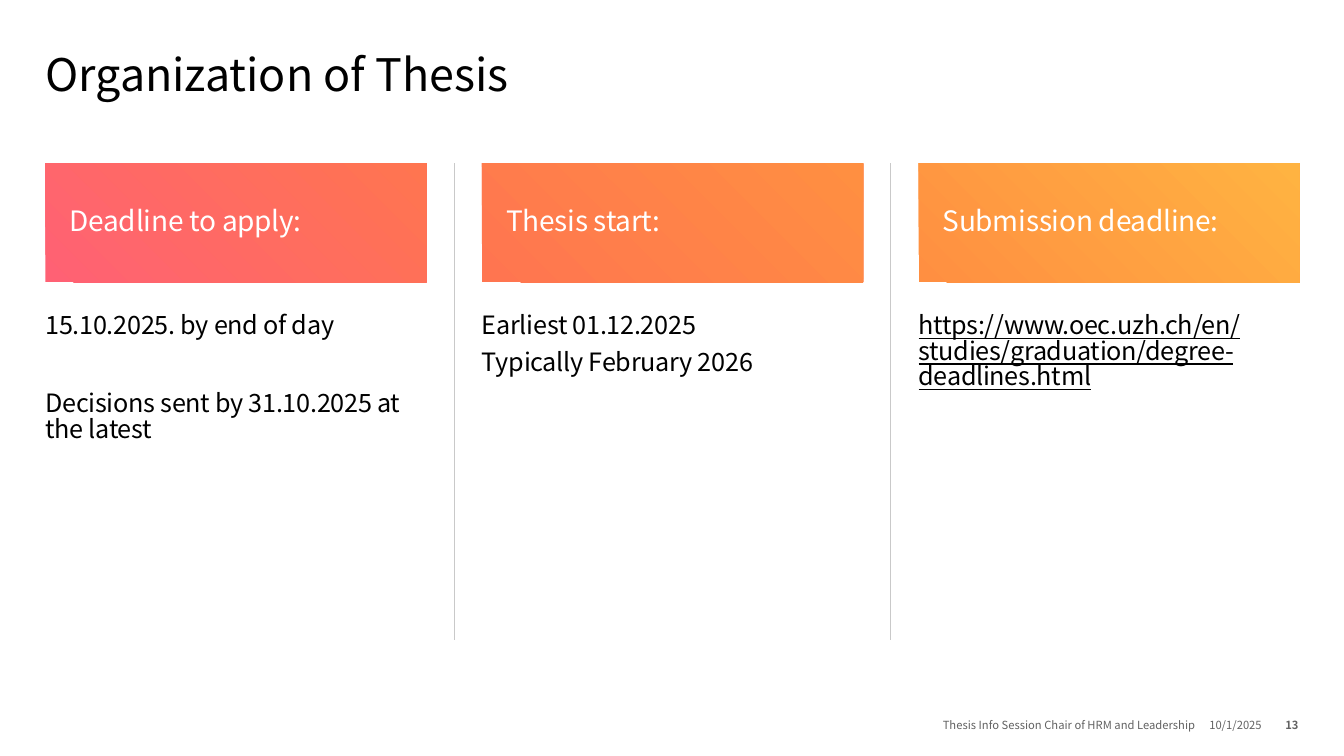
from dataclasses import dataclass

from lxml import etree
from pptx import Presentation
from pptx import util as u
from pptx.dml.color import RGBColor
from pptx.enum import shapes, text
from pptx.oxml.ns import qn

FONT = "Noto Sans CJK KR"
BLACK = RGBColor(0x00, 0x00, 0x00)
WHITE = RGBColor(0xFF, 0xFF, 0xFF)
GREY = RGBColor(0x62, 0x62, 0x62)
RULE = RGBColor(0xC9, 0xC9, 0xC9)
PINK = RGBColor(0xFF, 0x61, 0x74)
CORAL = RGBColor(0xFF, 0x75, 0x50)
ORANGE = RGBColor(0xFF, 0x8F, 0x41)
AMBER = RGBColor(0xFF, 0xB3, 0x41)

# Grid in inches: three columns between equal margins
LEFT, WIDE, GAP = 0.45, 3.78, 0.55
PITCH = WIDE + GAP
HEAD, HEAD_H = 1.62, 1.18
BODY, BODY_H = 3.12, 3.23
FOOT, FOOT_H = 7.06, 0.2


@dataclass(frozen=True)
class Column:
    head: str
    lines: tuple[str, ...]
    start: RGBColor
    end: RGBColor
    lead: float = 0  # space before each line after the first, in points
    under: bool = False


@dataclass(frozen=True)
class Note:
    words: str
    left: float
    width: float
    align: text.PP_ALIGN
    bold: bool = False


COLUMNS = (
    Column("Deadline to apply:",
           ("15.10.2025. by end of day",
            "Decisions sent by 31.10.2025 at the latest"),
           PINK, CORAL, lead=29.6),
    Column("Thesis start:",
           ("Earliest 01.12.2025", "Typically February 2026"),
           CORAL, ORANGE),
    Column("Submission deadline:",
           ("https://www.oec.uzh.ch/en/studies/graduation/degree-deadlines.html",),
           ORANGE, AMBER, under=True),
)
NOTES = (
    Note("Thesis Info Session Chair of HRM and Leadership", 7.53, 4.33,
         text.PP_ALIGN.RIGHT),
    Note("10/1/2025", 11.94, 0.63, text.PP_ALIGN.CENTER),
    Note("13", 12.57, 0.31, text.PP_ALIGN.RIGHT, bold=True),
)


def write(shape, *lines: str, size: float, color: RGBColor = BLACK,
          align=text.PP_ALIGN.LEFT, anchor=text.MSO_ANCHOR.TOP,
          inset: float = 0, pitch: float = 1.0, after: float = 0,
          lead: float = 0, track: int = 0, bold: bool = False,
          under: bool = False) -> None:
    """Fill a shape with paragraphs; track is in hundredths of a point."""
    frame = shape.text_frame
    frame.word_wrap = True
    frame.auto_size = text.MSO_AUTO_SIZE.NONE
    frame.vertical_anchor = anchor
    frame.margin_left = frame.margin_right = u.Inches(inset)
    frame.margin_top = frame.margin_bottom = u.Inches(inset)
    for i, line in enumerate(lines):
        para = frame.add_paragraph() if i else frame.paragraphs[0]
        para.alignment = align
        para.line_spacing = pitch
        para.space_before = u.Pt(lead if i else 0)
        para.space_after = u.Pt(after)
        run = para.add_run()
        run.text = line
        font = run.font
        font.name, font.size, font.bold = FONT, u.Pt(size), bold
        font.underline = under
        font.color.rgb = color
        if track:
            run._r.get_or_add_rPr().set("spc", str(track))


def add_box(slide, left: float, top: float, width: float, height: float):
    return slide.shapes.add_textbox(*map(u.Inches, (left, top, width, height)))


def add_rule(slide, x: float) -> None:
    line = slide.shapes.add_connector(
        shapes.MSO_CONNECTOR.STRAIGHT,
        *map(u.Inches, (x, HEAD, x, BODY + BODY_H)))
    line.line.color.rgb = RULE
    line.line.width = u.Pt(0.5)
    etree.SubElement(line._element.spPr, qn("a:effectLst"))


def add_column(slide, col: Column, left: float) -> None:
    band = slide.shapes.add_shape(
        shapes.MSO_SHAPE.RECTANGLE,
        *map(u.Inches, (left, HEAD, WIDE, HEAD_H)))
    band.shadow.inherit = False
    band.line.fill.background()
    band.fill.gradient()
    band.fill.gradient_angle = 45
    for stop, color in zip(band.fill.gradient_stops, (col.start, col.end)):
        stop.color.rgb = color
    write(band, col.head, size=20, color=WHITE, inset=0.24, pitch=0.9,
          anchor=text.MSO_ANCHOR.MIDDLE, track=-20)
    write(add_box(slide, left, BODY, WIDE, BODY_H), *col.lines, size=18,
          pitch=0.84, after=8, lead=col.lead, track=-20, under=col.under)


def main() -> None:
    deck = Presentation()
    deck.slide_width, deck.slide_height = u.Inches(13.33), u.Inches(7.5)
    slide = deck.slides.add_slide(deck.slide_layouts[5])

    title = slide.shapes.title
    title.left, title.top = u.Inches(LEFT), u.Inches(0.52)
    title.width, title.height = u.Inches(2 * PITCH + WIDE), u.Inches(0.63)
    write(title, "Organization of Thesis", size=32, pitch=0.9)

    for i, col in enumerate(COLUMNS):
        left = LEFT + i * PITCH
        if i:
            add_rule(slide, left - GAP / 2)
        add_column(slide, col, left)

    for note in NOTES:
        write(add_box(slide, note.left, FOOT, note.width, FOOT_H), note.words,
              size=8, color=GREY, align=note.align, bold=note.bold,
              anchor=text.MSO_ANCHOR.BOTTOM)

    deck.save("out.pptx")


if __name__ == "__main__":
    main()
